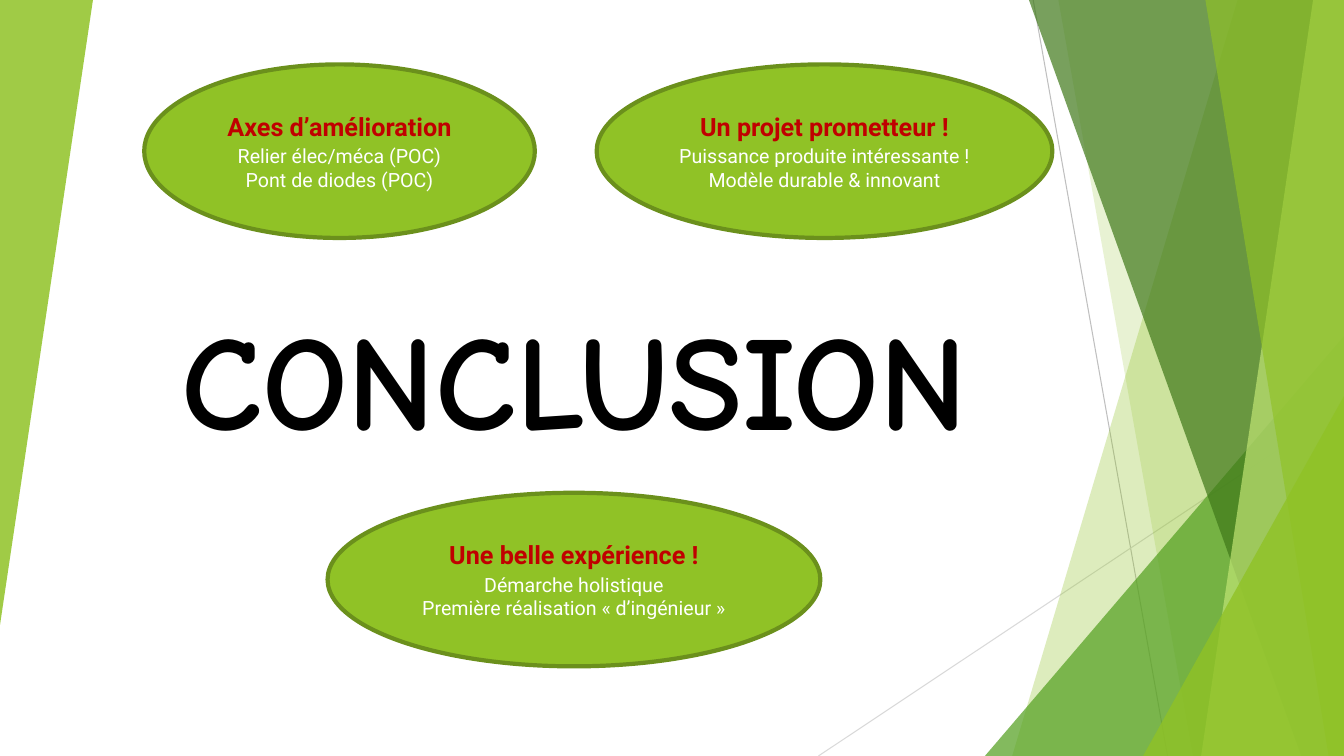
"""Build the conclusion slide: a large title, three ellipses and a green faceted backdrop."""
from dataclasses import dataclass

from lxml import etree
from pptx import Presentation
from pptx.dml.color import RGBColor
from pptx.enum import shapes, text
from pptx.oxml import ns
from pptx.util import Pt


@dataclass(frozen=True)
class Theme:
    """Colours, fonts and type sizes."""
    lime: str = "90C226"
    leaf: str = "54A021"
    forest: str = "3F7819"
    pale: str = "C0E474"
    edge: str = "6B901C"
    red: str = "C00000"
    white: str = "FFFFFF"
    black: str = "000000"
    grey: str = "BFBFBF"
    light_grey: str = "D9D9D9"
    title_font: str = "Comic Neue"
    body_font: str = "Roboto"
    title_size: int = 96
    heading_size: int = 18
    body_size: int = 14


THEME = Theme()
WIDTH, HEIGHT = 960, 540


def add_node(parent, tag, **attributes):
    """Append a DrawingML element and return it."""
    return etree.SubElement(parent, ns.qn(tag), attributes)


def style_font(font, name, size, colour, bold):
    """Set every font property used on the slide."""
    font.name, font.size, font.bold = name, Pt(size), bold
    font.color.rgb = RGBColor.from_string(colour)


def paint_facet(shape, colour, opacity):
    """Give a shape a translucent fill, no line and no shadow."""
    shape.shadow.inherit = False
    shape.line.fill.background()
    shape.fill.solid()
    shape.fill.fore_color.rgb = RGBColor.from_string(colour)
    tint = shape.fill._xPr.find(".//" + ns.qn("a:srgbClr"))
    add_node(tint, "a:alpha", val=str(opacity * 1000))


def add_ray(page, start, end, colour):
    """Draw a thin straight line."""
    ray = page.shapes.add_connector(shapes.MSO_CONNECTOR.STRAIGHT, *map(Pt, start + end))
    ray.line.color.rgb = RGBColor.from_string(colour)
    ray.line.width = Pt(0.75)
    add_node(ray._element.spPr, "a:effectLst")


def add_panel(page, top_x, bottom_x, colour, opacity):
    """Draw a full-height panel from a slanted left edge to the right slide edge."""
    builder = page.shapes.build_freeform(Pt(top_x), 0, scale=1.0)
    corners = [(WIDTH, 0), (WIDTH, HEIGHT), (bottom_x, HEIGHT)]
    builder.add_line_segments([(Pt(x), Pt(y)) for x, y in corners], close=True)
    paint_facet(builder.convert_to_shape(), colour, opacity)


def add_wedge(page, left, top, width, height, colour, opacity, rotation=0):
    """Draw a right-angled triangle."""
    wedge = page.shapes.add_shape(
        shapes.MSO_SHAPE.ISOSCELES_TRIANGLE, *map(Pt, (left, top, width, height)))
    wedge.adjustments[0] = 1
    wedge.rotation = rotation
    paint_facet(wedge, colour, opacity)


def add_backdrop(page):
    """Draw the faceted decoration from back to front."""
    add_ray(page, (738, 0), (834, HEIGHT), THEME.grey)
    add_ray(page, (WIDTH, 290), (584.6, HEIGHT), THEME.light_grey)
    add_panel(page, 884, 723, THEME.lime, 30)
    add_panel(page, 756, 852, THEME.lime, 20)
    add_wedge(page, 703.5, 240, 256.5, 300, THEME.leaf, 72)
    add_panel(page, 735, 929.5, THEME.forest, 70)
    add_panel(page, 938, 858, THEME.pale, 70)
    add_panel(page, 861, 949, THEME.lime, 65)
    add_wedge(page, 816.5, 283, 143.5, 257, THEME.lime, 80)
    add_wedge(page, 0, 0, 66.4, 446.4, THEME.lime, 85, rotation=180)


def set_title(page, wording):
    """Place the title and thicken its letters with an outline."""
    title = page.shapes.title
    title.left, title.top, title.width, title.height = map(Pt, (68.4, 208, 683.3, 123.8))
    frame = title.text_frame
    frame.word_wrap = True
    frame.auto_size = text.MSO_AUTO_SIZE.NONE
    frame.vertical_anchor = text.MSO_ANCHOR.TOP
    para = frame.paragraphs[0]
    para.alignment = text.PP_ALIGN.CENTER
    span = para.add_run()
    span.text = wording
    outline = add_node(span._r.get_or_add_rPr(), "a:ln", w=str(Pt(3)))
    add_node(add_node(outline, "a:solidFill"), "a:srgbClr", val=THEME.black)
    style_font(span.font, THEME.title_font, THEME.title_size, THEME.black, True)


def add_ellipse(page, left, top, width, heading, details):
    """Draw an ellipse with a heading and its detail lines."""
    ellipse = page.shapes.add_shape(
        shapes.MSO_SHAPE.OVAL, *map(Pt, (left, top, width, 124)))
    ellipse.shadow.inherit = False
    ellipse.fill.solid()
    ellipse.fill.fore_color.rgb = RGBColor.from_string(THEME.lime)
    ellipse.line.color.rgb = RGBColor.from_string(THEME.edge)
    ellipse.line.width = Pt(3)
    frame = ellipse.text_frame
    frame.word_wrap = True
    frame.vertical_anchor = text.MSO_ANCHOR.MIDDLE
    para = frame.paragraphs[0]
    para.text = heading
    para.alignment = text.PP_ALIGN.CENTER
    para.space_after = Pt(2.3)
    style_font(para.font, THEME.body_font, THEME.heading_size, THEME.red, True)
    for detail in details:
        para = frame.add_paragraph()
        para.text = detail
        para.alignment = text.PP_ALIGN.CENTER
        style_font(para.font, THEME.body_font, THEME.body_size, THEME.white, False)


def main():
    """Assemble and save the deck."""
    deck = Presentation()
    deck.slide_width, deck.slide_height = Pt(WIDTH), Pt(HEIGHT)
    page = deck.slides.add_slide(deck.slide_layouts[5])
    add_backdrop(page)
    set_title(page, "CONCLUSION")
    add_ellipse(page, 103, 46, 279, "Axes d’amélioration",
                ["Relier élec/méca (POC)", "Pont de diodes (POC)"])
    add_ellipse(page, 426.2, 46, 325.5, "Un projet prometteur !",
                ["Puissance produite intéressante !", "Modèle durable & innovant"])
    add_ellipse(page, 234, 352, 352, "Une belle expérience !",
                ["Démarche holistique", "Première réalisation « d’ingénieur »"])
    deck.save("out.pptx")


if __name__ == "__main__":
    main()
